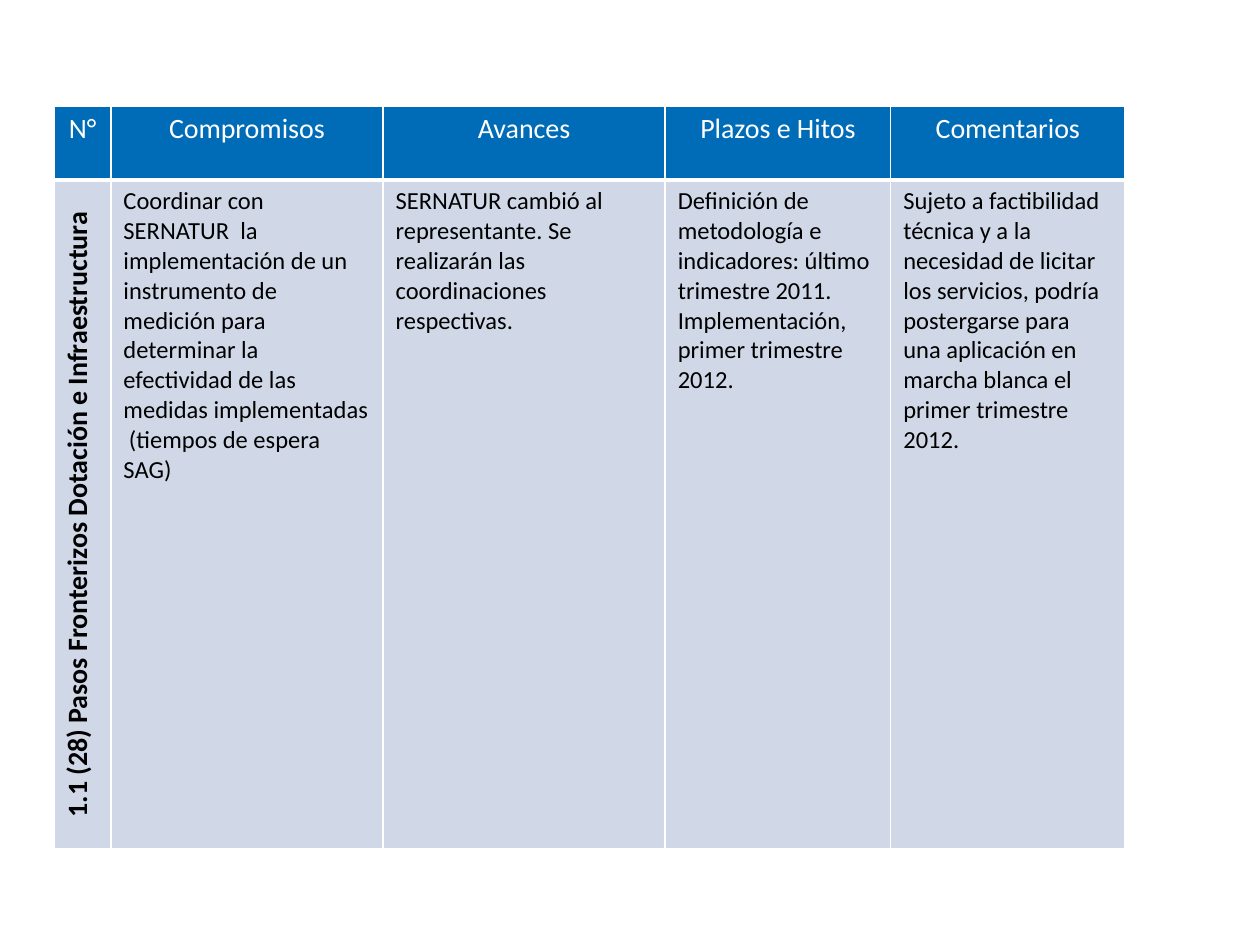
"""Build a one-slide commitments table with a vertical row label."""
from lxml.etree import SubElement
from pptx import Presentation
from pptx.dml.color import RGBColor
from pptx.enum.text import PP_ALIGN
from pptx.oxml.ns import qn
from pptx.util import Inches, Pt

HEADERS = ["N°", "Compromisos", "Avances", "Plazos e Hitos", "Comentarios"]
COMMITMENT = [
    "1.1 (28) Pasos Fronterizos Dotación e Infraestructura",
    "Coordinar con SERNATUR  la implementación de un instrumento de medición para "
    "determinar la efectividad de las medidas implementadas  (tiempos de espera SAG)",
    "SERNATUR cambió al representante. Se realizarán las coordinaciones respectivas.",
    "Definición de metodología e indicadores: último trimestre 2011. "
    "Implementación, primer trimestre 2012.",
    "Sujeto a factibilidad técnica y a la necesidad de licitar los servicios, podría "
    "postergarse para una aplicación en marcha blanca el primer trimestre 2012.",
]
COLUMN_WIDTHS = [0.45, 2.16, 2.24, 1.79, 1.86]
ROW_HEIGHTS = [0.59, 5.31]
LEFT, TOP = 0.43, 0.84

THEME = {
    "font": "Calibri",
    "header_fill": "006CB7",
    "body_fill": "D0D8E8",
    "header_text": "FFFFFF",
    "body_text": "000000",
    "border": "FFFFFF",
    "label_size": 16,
    "body_size": 14,
}


def add_borders(cell, bottom):
    properties = cell._tc.get_or_add_tcPr()
    for side, width in (("L", 1), ("R", 1), ("T", 1), ("B", bottom)):
        line = SubElement(properties, qn(f"a:ln{side}"), w=str(Pt(width)))
        fill = SubElement(line, qn("a:solidFill"))
        SubElement(fill, qn("a:srgbClr"), val=THEME["border"])


def format_cell(cell, text, is_header, is_label):
    kind = "header" if is_header else "body"
    add_borders(cell, 3 if is_header else 1)
    cell.fill.solid()
    cell.fill.fore_color.rgb = RGBColor.from_string(THEME[f"{kind}_fill"])
    cell.text = text
    para = cell.text_frame.paragraphs[0]
    centred = is_header or is_label
    para.alignment = PP_ALIGN.CENTER if centred else PP_ALIGN.LEFT
    para.font.name = THEME["font"]
    para.font.size = Pt(THEME["label_size" if centred else "body_size"])
    para.font.bold = is_label and not is_header
    para.font.color.rgb = RGBColor.from_string(THEME[f"{kind}_text"])
    if is_label and not is_header:
        cell._tc.get_or_add_tcPr().set("vert", "vert270")


def main():
    deck = Presentation()
    deck.slide_width, deck.slide_height = Inches(10), Inches(7.5)
    page = deck.slides.add_slide(deck.slide_layouts[6])
    rows = [HEADERS, COMMITMENT]
    table = page.shapes.add_table(
        len(rows), len(HEADERS), Inches(LEFT), Inches(TOP),
        Inches(sum(COLUMN_WIDTHS)), Inches(sum(ROW_HEIGHTS)),
    ).table
    for column, width in zip(table.columns, COLUMN_WIDTHS):
        column.width = Inches(width)
    for row, height in zip(table.rows, ROW_HEIGHTS):
        row.height = Inches(height)
    for r, texts in enumerate(rows):
        for c, text in enumerate(texts):
            format_cell(table.cell(r, c), text, r == 0, c == 0)
    deck.save("out.pptx")


if __name__ == "__main__":
    main()
